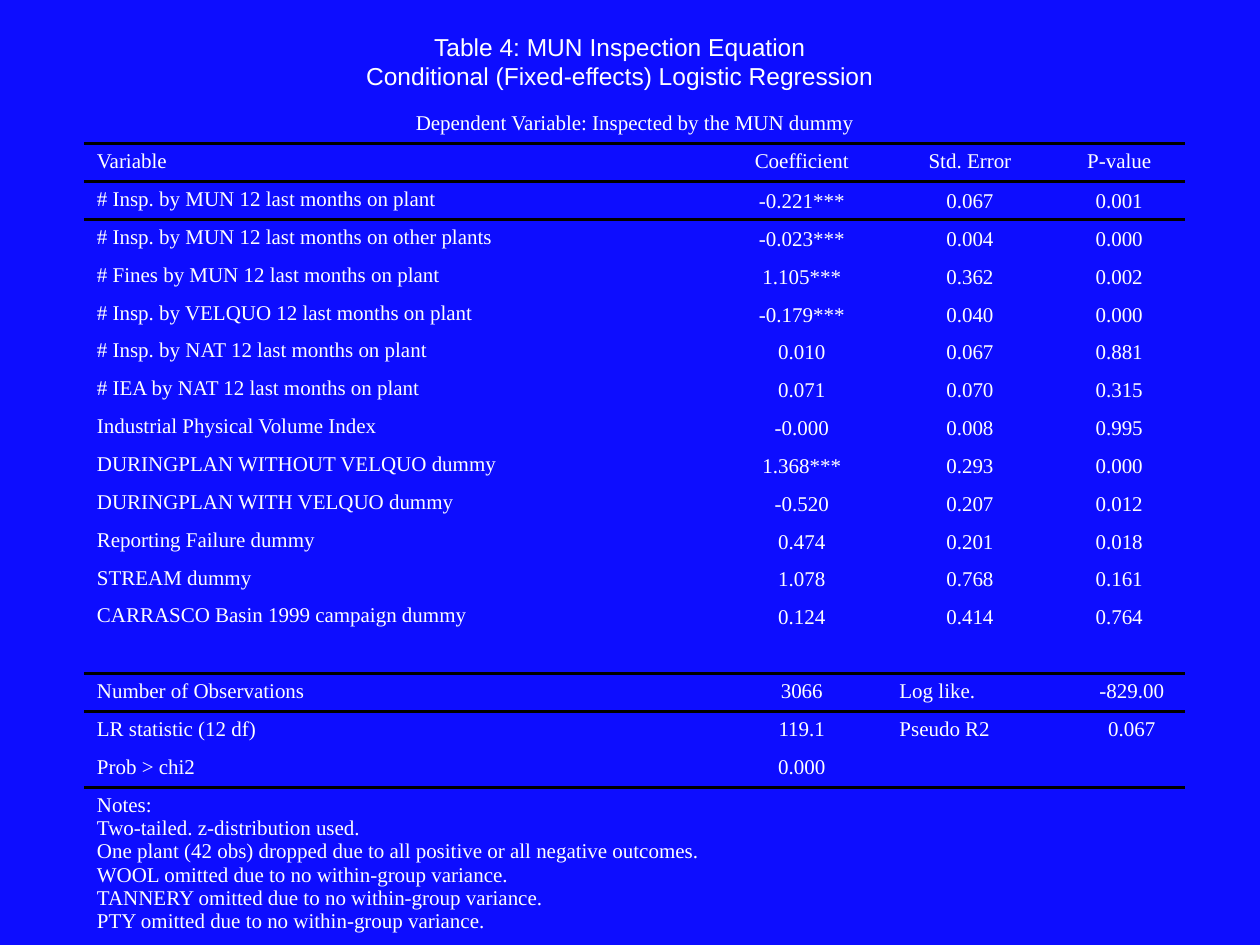
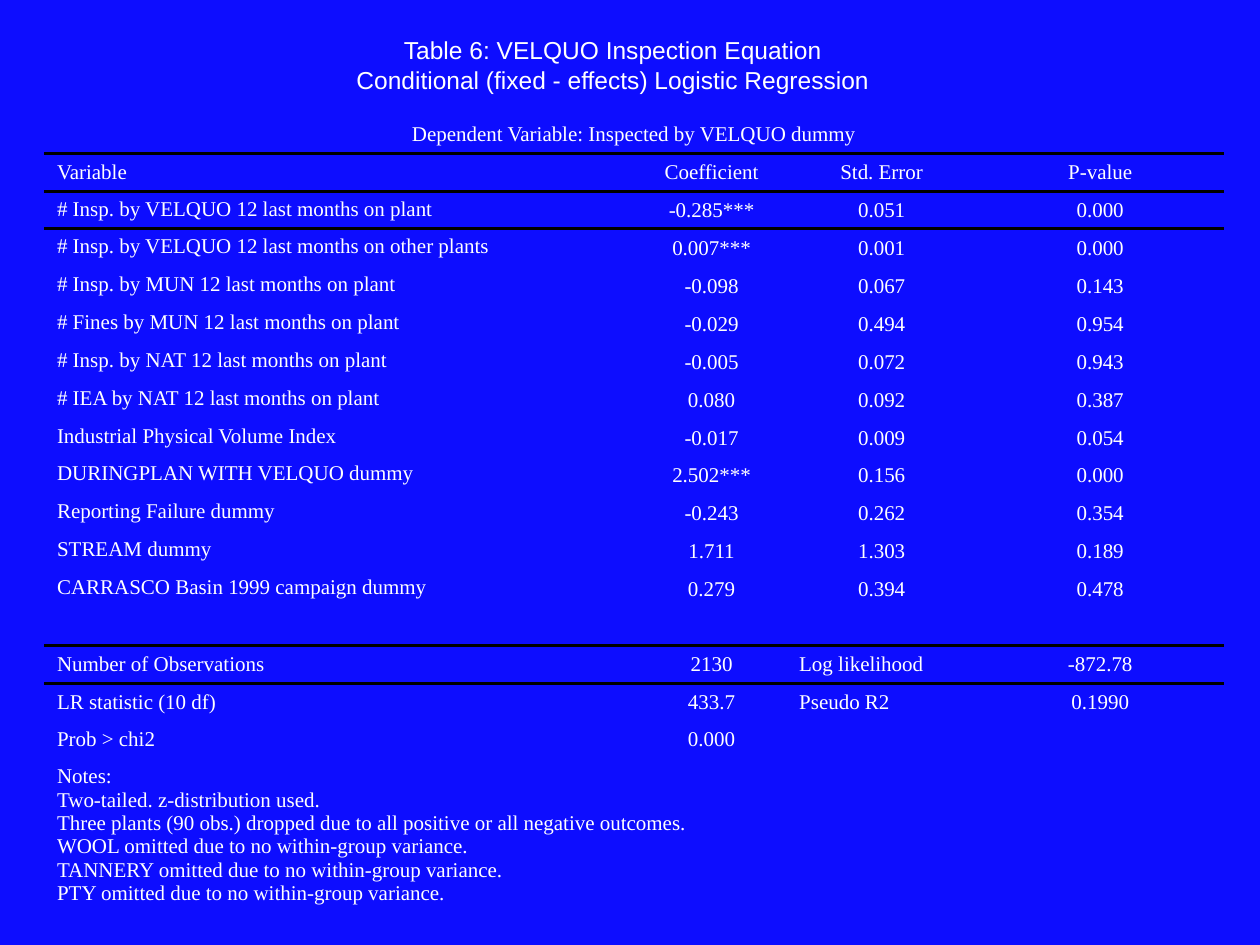
from dataclasses import dataclass

from lxml.etree import SubElement
from pptx import Presentation
from pptx.dml.color import RGBColor
from pptx.enum.text import MSO_ANCHOR as Anchor, PP_ALIGN as Align
from pptx.oxml.ns import qn
from pptx.util import Pt

COLORS = {"background": "0D0DFF", "text": "FFFFFF", "rule": "000000"}
TITLE_FONT, TABLE_FONT = "Arial", "Times New Roman"
TITLE_SIZE, TABLE_SIZE = 14, 12
ROW_HEIGHT, NOTES_HEIGHT = 21.6, 93.6
RULE_WIDTH = 2
NO_STYLE = "{2D5ABB26-0587-4C30-8999-92F81FD0307C}"

HEADINGS = ("Variable", "Coefficient", "Std. Error", "P-value")
OMISSIONS = tuple(f"{name} omitted due to no within-group variance."
                  for name in ("WOOL", "TANNERY", "PTY"))


@dataclass(frozen=True)
class Box:
    left: float
    top: float
    width: float
    height: float


@dataclass(frozen=True)
class Regression:
    title: tuple[str, ...]
    title_box: Box
    dependent: str
    left: float
    top: float
    columns: tuple[float, ...]
    body_starts: tuple[int, ...]     # first grid column of each body cell
    summary_starts: tuple[int, ...]  # the same for the summary rows
    heading_anchor: Anchor
    estimates: tuple[tuple[str, ...], ...]
    summary: tuple[tuple[str, ...], ...]
    summary_ruled: bool
    dropped: str


@dataclass(frozen=True)
class Row:
    texts: tuple[str, ...]
    starts: tuple[int, ...]
    aligns: tuple[Align, ...]
    anchors: tuple[Anchor, ...]
    ruled: bool = False              # rule under this row
    height: float = ROW_HEIGHT


MUN = Regression(
    title=("Table 4: MUN Inspection Equation",
           "Conditional (Fixed-effects) Logistic Regression"),
    title_box=Box(184.3, 13, 339.8, 58.3),
    dependent="Dependent Variable: Inspected by the MUN dummy",
    left=48.2, top=60.5,
    columns=(361.4, 97.2, 95, 14.4, 61.2),
    body_starts=(0, 1, 2, 3), summary_starts=(0, 1, 2, 4),
    heading_anchor=Anchor.TOP,
    estimates=(
        ("# Insp. by MUN 12 last months on plant", "-0.221***", "0.067", "0.001"),
        ("# Insp. by MUN 12 last months on other plants", "-0.023***", "0.004", "0.000"),
        ("# Fines by MUN 12 last months on plant", "1.105***", "0.362", "0.002"),
        ("# Insp. by VELQUO 12 last months on plant", "-0.179***", "0.040", "0.000"),
        ("# Insp. by NAT 12 last months on plant", "0.010", "0.067", "0.881"),
        ("# IEA by NAT 12 last months on plant", "0.071", "0.070", "0.315"),
        ("Industrial Physical Volume Index", "-0.000", "0.008", "0.995"),
        ("DURINGPLAN WITHOUT VELQUO dummy", "1.368***", "0.293", "0.000"),
        ("DURINGPLAN WITH VELQUO dummy", "-0.520", "0.207", "0.012"),
        ("Reporting Failure dummy", "0.474", "0.201", "0.018"),
        ("STREAM dummy", "1.078", "0.768", "0.161"),
        ("CARRASCO Basin 1999 campaign dummy", "0.124", "0.414", "0.764"),
    ),
    summary=(
        ("Number of Observations", "3066", "Log like.", "-829.00"),
        ("LR statistic (12 df)", "119.1", "Pseudo R2", "0.067"),
        ("Prob > chi2", "0.000", "", ""),
    ),
    summary_ruled=True,
    dropped="One plant (42 obs) dropped due to all positive or all negative outcomes.",
)

VELQUO = Regression(
    title=("Table 6: VELQUO Inspection Equation",
           "Conditional (fixed - effects) Logistic Regression"),
    title_box=Box(195.8, 15.1, 308.9, 58.3),
    dependent="Dependent Variable: Inspected by VELQUO dummy",
    left=25.4, top=65.9,
    columns=(338.4, 85.7, 108.7, 141.1),
    body_starts=(0, 1, 2, 3), summary_starts=(0, 1, 2, 3),
    heading_anchor=Anchor.MIDDLE,
    estimates=(
        ("# Insp. by VELQUO 12 last months on plant", "-0.285***", "0.051", "0.000"),
        ("# Insp. by VELQUO 12 last months on other plants", "0.007***", "0.001", "0.000"),
        ("# Insp. by MUN 12 last months on plant", "-0.098", "0.067", "0.143"),
        ("# Fines by MUN 12 last months on plant", "-0.029", "0.494", "0.954"),
        ("# Insp. by NAT 12 last months on plant", "-0.005", "0.072", "0.943"),
        ("# IEA by NAT 12 last months on plant", "0.080", "0.092", "0.387"),
        ("Industrial Physical Volume Index", "-0.017", "0.009", "0.054"),
        ("DURINGPLAN WITH VELQUO dummy", "2.502***", "0.156", "0.000"),
        ("Reporting Failure dummy", "-0.243", "0.262", "0.354"),
        ("STREAM dummy", "1.711", "1.303", "0.189"),
        ("CARRASCO Basin 1999 campaign dummy", "0.279", "0.394", "0.478"),
    ),
    summary=(
        ("Number of Observations", "2130", "Log likelihood", "-872.78"),
        ("LR statistic (10 df)", "433.7", "Pseudo R2", "0.1990"),
        ("Prob > chi2", "0.000", "", ""),
    ),
    summary_ruled=False,
    dropped="Three plants (90 obs.) dropped due to all positive or all negative outcomes.",
)


def write_lines(frame, lines: tuple[str, ...], font: str, size: float, align: Align) -> None:
    """Write one paragraph per line; an empty line only keeps its text size."""
    for index, line in enumerate(lines):
        paragraph = frame.paragraphs[0] if index == 0 else frame.add_paragraph()
        paragraph.alignment = align
        if not line:
            SubElement(paragraph._p, qn("a:endParaRPr"), sz=str(size * 100))
            continue
        run = paragraph.add_run()
        run.text = line
        run.font.name = font
        run.font.size = Pt(size)
        run.font.color.rgb = RGBColor.from_string(COLORS["text"])


def add_rule(cell, side: str) -> None:
    line = SubElement(cell._tc.get_or_add_tcPr(), qn(f"a:{side}"), w=str(Pt(RULE_WIDTH)))
    fill = SubElement(line, qn("a:solidFill"))
    SubElement(fill, qn("a:srgbClr"), val=COLORS["rule"])


def table_rows(regression: Regression) -> list[Row]:
    left, center = Align.JUSTIFY, Align.CENTER
    body, heading = regression.body_starts, regression.heading_anchor
    label_first = (left, center, center, center)
    headings = (heading,) * 4
    figures = (Anchor.TOP,) + (Anchor.BOTTOM,) * 3
    notes = ("Notes:", "Two-tailed. z-distribution used.", regression.dropped) + OMISSIONS

    rows = [Row((regression.dependent,), (0,), (center,), (heading,), ruled=True),
            Row(HEADINGS, body, label_first, headings, ruled=True)]
    rows += [Row(texts, body, label_first, figures) for texts in regression.estimates]
    rows.append(Row(("",) * 4, body, label_first, figures, ruled=True))
    last = regression.summary[-1]
    rows += [Row(texts, regression.summary_starts, (left, center, left, center), headings,
                 ruled=regression.summary_ruled and texts is last)
             for texts in regression.summary]
    rows.append(Row(("\n".join(notes),), (0,), (left,), (Anchor.TOP,), height=NOTES_HEIGHT))
    return rows


def add_title(slide, regression: Regression) -> None:
    box = regression.title_box
    frame = slide.shapes.add_textbox(
        Pt(box.left), Pt(box.top), Pt(box.width), Pt(box.height)).text_frame
    frame.word_wrap = False
    frame.vertical_anchor = Anchor.TOP
    frame.margin_top = Pt(5)
    write_lines(frame, regression.title, TITLE_FONT, TITLE_SIZE, Align.CENTER)


def add_results(slide, regression: Regression) -> None:
    rows, widths = table_rows(regression), regression.columns
    table = slide.shapes.add_table(
        len(rows), len(widths), Pt(regression.left), Pt(regression.top),
        Pt(sum(widths)), Pt(sum(row.height for row in rows))).table
    table.first_row = table.horz_banding = False
    table._tbl.tblPr.find(qn("a:tableStyleId")).text = NO_STYLE
    for column, width in zip(table.columns, widths):
        column.width = Pt(width)

    for index, row in enumerate(rows):
        table.rows[index].height = Pt(row.height)
        # Rules and empty fill for the whole row
        for cell in table.rows[index].cells:
            if index and rows[index - 1].ruled:
                add_rule(cell, "lnT")
            if row.ruled:
                add_rule(cell, "lnB")
            cell.fill.background()
        # Each cell reaches to the start of the next one
        ends = row.starts[1:] + (len(widths),)
        for text, start, end, align, anchor in zip(
                row.texts, row.starts, ends, row.aligns, row.anchors):
            cell = table.cell(index, start)
            if end - start > 1:
                cell.merge(table.cell(index, end - 1))
            cell.vertical_anchor = anchor
            write_lines(cell.text_frame, tuple(text.split("\n")),
                        TABLE_FONT, TABLE_SIZE, align)


def main() -> None:
    deck = Presentation()
    deck.slide_width, deck.slide_height = Pt(720), Pt(540)
    for regression in (MUN, VELQUO):
        slide = deck.slides.add_slide(deck.slide_layouts[6])
        backdrop = slide.background.fill
        backdrop.solid()
        backdrop.fore_color.rgb = RGBColor.from_string(COLORS["background"])
        add_title(slide, regression)
        add_results(slide, regression)
    deck.save("out.pptx")


if __name__ == "__main__":
    main()
